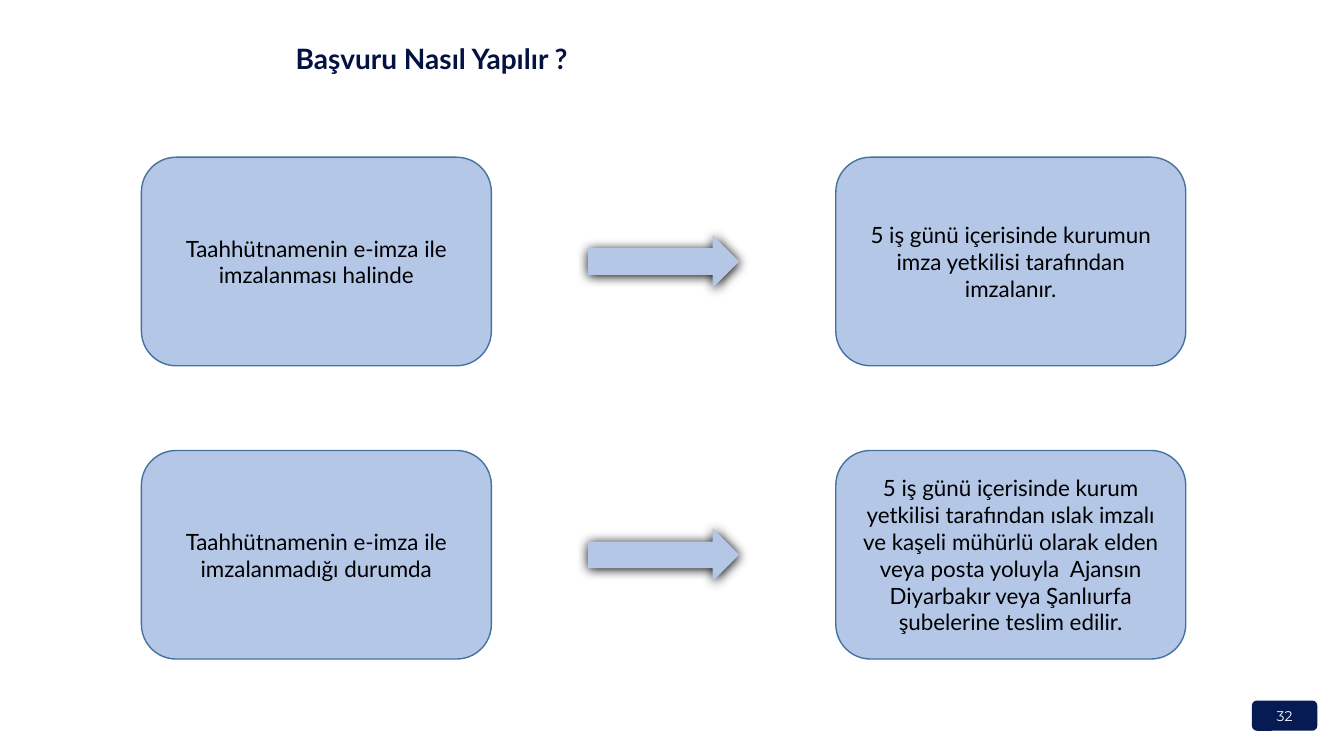
import pptx
import pptx.util
import pptx.dml.color
import pptx.enum.shapes
import pptx.enum.text
import pptx.oxml
import pptx.oxml.ns

Pt = pptx.util.Pt
SHAPES = pptx.enum.shapes.MSO_SHAPE
ALIGN = pptx.enum.text.PP_ALIGN
ANCHOR = pptx.enum.text.MSO_ANCHOR

COLOURS = {
    "title": "041243",
    "badge": "061A53",
    "badge_text": "FFFFFF",
    "step": "B4C7E7",
    "step_line": "43739E",
    "step_text": "000000",
}

SHADOW_XML = (
    '<a:outerShdw xmlns:a="http://schemas.openxmlformats.org/drawingml/2006/main" '
    'blurRad="%d" dist="%d" dir="5400000" algn="ctr" rotWithShape="0">'
    '<a:srgbClr val="000000"/></a:outerShdw>' % (Pt(8.5), Pt(1))
)


def colour(name):
    return pptx.dml.color.RGBColor.from_string(COLOURS[name])


class SlideBuilder:
    """Holds the style and the current slide."""

    body_font = "Lato"
    number_font = "Montserrat"

    def __init__(self, slide):
        self.slide = slide

    def set_text(self, shape, text, font, size, colour_name, align, anchor, bold=False):
        frame = shape.text_frame
        frame.text = text
        frame.word_wrap = True
        frame.vertical_anchor = anchor
        para = frame.paragraphs[0]
        para.alignment = align
        for span in para.runs:
            span.font.name = font
            span.font.size = Pt(size)
            span.font.bold = bold
            span.font.color.rgb = colour(colour_name)

    def shape(self, kind, left, top, width, height, fill, line=None):
        shape = self.slide.shapes.add_shape(
            kind, Pt(left), Pt(top), Pt(width), Pt(height))
        shape.shadow.inherit = False
        shape.fill.solid()
        shape.fill.fore_color.rgb = colour(fill)
        if line:
            shape.line.color.rgb = colour(line)
            shape.line.width = Pt(1)
        else:
            shape.line.fill.background()
        return shape

    def title(self, text, left, top, width, height):
        title = self.slide.shapes.title
        title.left, title.top = Pt(left), Pt(top)
        title.width, title.height = Pt(width), Pt(height)
        self.set_text(title, text, self.body_font, 20, "title",
                      ALIGN.LEFT, ANCHOR.TOP, bold=True)
        title.text_frame.auto_size = pptx.enum.text.MSO_AUTO_SIZE.NONE

    def step(self, text, left, top, width, height):
        box = self.shape(SHAPES.ROUNDED_RECTANGLE, left, top, width, height,
                         "step", "step_line")
        self.set_text(box, text, self.body_font, 16, "step_text",
                      ALIGN.CENTER, ANCHOR.MIDDLE)

    def arrow(self, left, top, width, height):
        arrow = self.shape(SHAPES.RIGHT_ARROW, left, top, width, height, "step")
        effects = arrow._element.spPr.find(pptx.oxml.ns.qn("a:effectLst"))
        effects.append(pptx.oxml.parse_xml(SHADOW_XML))

    def page_number(self, text, left, top, width, height):
        badge = self.shape(SHAPES.ROUNDED_RECTANGLE, left, top, width, height, "badge")
        self.set_text(badge, text, self.number_font, 10, "badge_text",
                      ALIGN.CENTER, ANCHOR.MIDDLE)


STEPS = [
    ("Taahhütnamenin e-imza ile imzalanması halinde",
     "5 iş günü içerisinde kurumun imza yetkilisi tarafından imzalanır."),
    ("Taahhütnamenin e-imza ile imzalanmadığı durumda",
     "5 iş günü içerisinde kurum yetkilisi tarafından ıslak imzalı ve kaşeli "
     "mühürlü olarak elden veya posta yoluyla  Ajansın Diyarbakır veya Şanlıurfa "
     "şubelerine teslim edilir."),
]

# Grid of condition and action boxes
CONDITION_LEFT, ARROW_LEFT, ACTION_LEFT = 101, 420, 597
FIRST_TOP, ROW_PITCH = 112.3, 209.5
BOX_WIDTH, BOX_HEIGHT = 250, 149
ARROW_WIDTH, ARROW_HEIGHT = 108, 38


def main():
    deck = pptx.Presentation()
    deck.slide_width, deck.slide_height = Pt(960), Pt(540)
    page = SlideBuilder(deck.slides.add_slide(deck.slide_layouts[5]))

    # Page number and title
    page.page_number("32", 894.2, 500.4, 46.8, 21.6)
    page.title("Başvuru Nasıl Yapılır ?", 204, 26, 756, 32)

    # One row per case: condition, arrow, action
    for row, (condition, action) in enumerate(STEPS):
        top = FIRST_TOP + row * ROW_PITCH
        page.step(condition, CONDITION_LEFT, top, BOX_WIDTH, BOX_HEIGHT)
        page.arrow(ARROW_LEFT, top + (BOX_HEIGHT - ARROW_HEIGHT) / 2,
                   ARROW_WIDTH, ARROW_HEIGHT)
        page.step(action, ACTION_LEFT, top, BOX_WIDTH, BOX_HEIGHT)

    deck.save("out.pptx")


if __name__ == "__main__":
    main()
